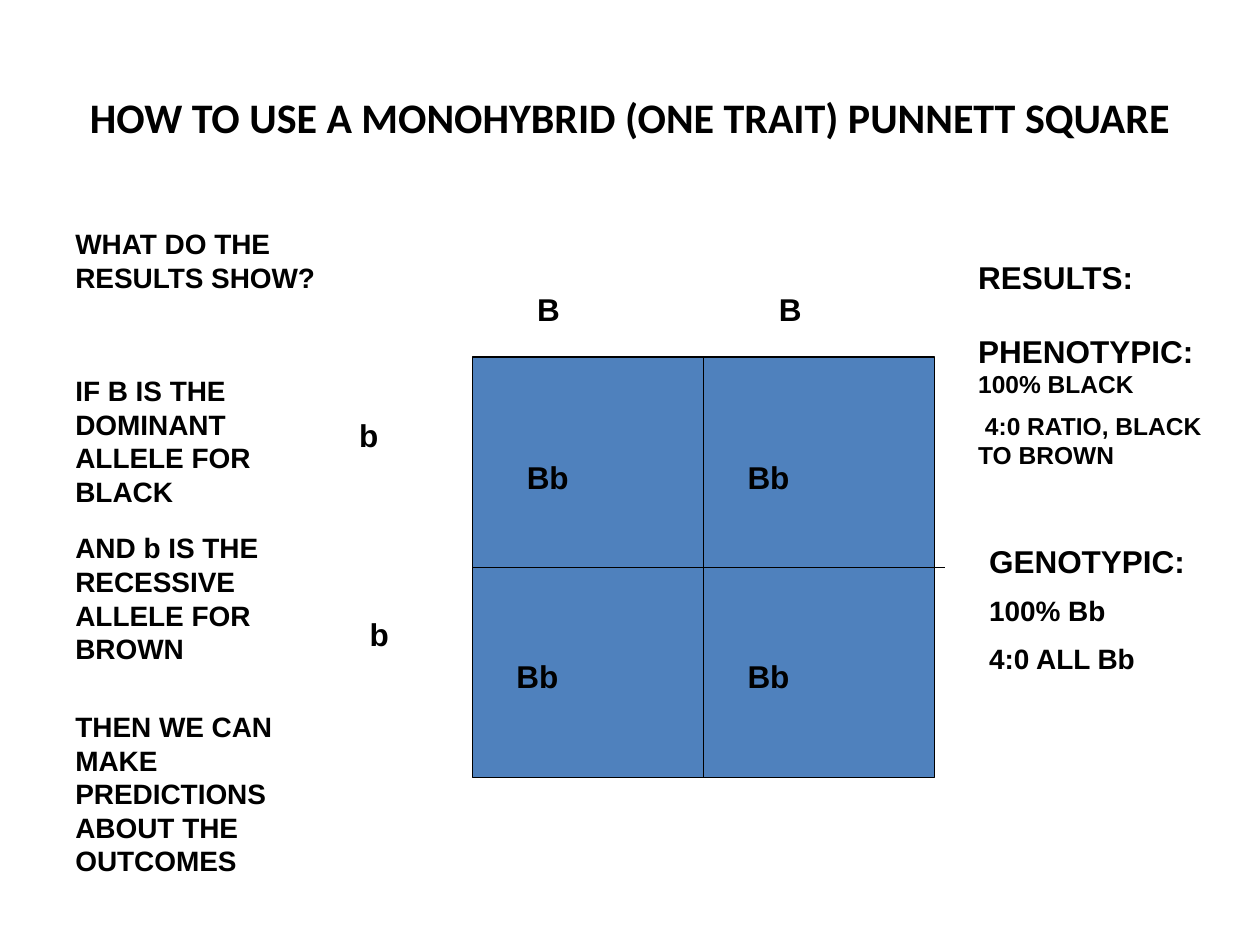
import pptx
import pptx.dml.color
import pptx.enum.shapes
import pptx.enum.text
import pptx.oxml.ns
import pptx.util
from lxml import etree

Cm = pptx.util.Cm
Pt = pptx.util.Pt

COLOURS = {"text": "000000", "line": "000000", "square": "4F81BD"}

# Punnett square, in centimetres
LEFT, TOP, WIDTH, HEIGHT = 9.53, 7.2, 9.31, 8.47
RIGHT, BOTTOM = LEFT + WIDTH, TOP + HEIGHT
MIDDLE_X, MIDDLE_Y = LEFT + WIDTH / 2, TOP + HEIGHT / 2

# left, top, width, text
ALLELES = [
    (10.58, 5.72, 4.66, "B"),
    (15.45, 5.72, 3.39, "B"),
    (6.99, 8.26, 1.91, "b"),
    (7.2, 12.28, 1.06, "b"),
    (10.37, 9.1, 2.54, "Bb"),
    (14.82, 9.1, 2.75, "Bb"),
    (10.16, 13.12, 3.39, "Bb"),
    (14.82, 13.12, 3.18, "Bb"),
]

# top, width, height, text
EXPLANATIONS = [
    (4.45, 6.35, 1.63, "WHAT DO THE RESULTS SHOW?"),
    (7.41, 4.87, 2.97, "IF B IS THE DOMINANT ALLELE FOR BLACK"),
    (10.58, 5.93, 2.97, "AND b IS THE RECESSIVE ALLELE FOR BROWN"),
    (14.18, 5.72, 3.66, "THEN WE CAN MAKE PREDICTIONS ABOUT THE OUTCOMES"),
]

# left, top, width, height, paragraphs made of (text, size) spans
RESULTS = [
    (19.47, 5.08, 5.29, 1.02, [[("RESULTS:", 18)]]),
    (19.47, 6.56, 5.29, 3.1, [
        [("PHENOTYPIC:", 18), (" 100% BLACK", 14)],
        [(" 4:0 RATIO, BLACK TO BROWN", 14)],
    ]),
    (19.69, 10.8, 4.66, 3.05, [
        [("GENOTYPIC:", 18)],
        [("100% Bb", 16)],
        [("4:0 ALL Bb", 16)],
    ]),
]


def rgb(name):
    return pptx.dml.color.RGBColor.from_string(COLOURS[name])


def style_span(span, size, font="Arial"):
    span.font.name = font
    span.font.size = Pt(size)
    span.font.bold = True
    span.font.color.rgb = rgb("text")


def add_title(page, text):
    title = page.shapes.title
    title.left, title.top = Cm(1.27), Cm(0.76)
    title.width, title.height = Cm(22.86), Cm(3.18)
    title.text_frame.text = text
    title.text_frame.vertical_anchor = pptx.enum.text.MSO_ANCHOR.MIDDLE
    paragraph = title.text_frame.paragraphs[0]
    paragraph.alignment = pptx.enum.text.PP_ALIGN.CENTER
    style_span(paragraph.runs[0], 24, "Calibri")


def add_text(page, left, top, width, height, paragraphs):
    """Add a text box; each later paragraph is set off by half its text size."""
    box = page.shapes.add_textbox(Cm(left), Cm(top), Cm(width), Cm(height))
    frame = box.text_frame
    frame.word_wrap = True
    frame.auto_size = pptx.enum.text.MSO_AUTO_SIZE.SHAPE_TO_FIT_TEXT
    for index, spans in enumerate(paragraphs):
        paragraph = frame.add_paragraph() if index else frame.paragraphs[0]
        if index:
            paragraph.space_before = Pt(spans[0][1] / 2)
        for text, size in spans:
            span = paragraph.add_run()
            span.text = text
            style_span(span, size)


def add_line(page, x1, y1, x2, y2):
    line = page.shapes.add_connector(
        pptx.enum.shapes.MSO_CONNECTOR.STRAIGHT, Cm(x1), Cm(y1), Cm(x2), Cm(y2))
    line.line.color.rgb = rgb("line")
    line.line.width = Pt(0.75)
    properties = line._element.spPr
    etree.SubElement(properties, pptx.oxml.ns.qn("a:effectLst"))


def add_punnett_square(page):
    square = page.shapes.add_shape(
        pptx.enum.shapes.MSO_SHAPE.RECTANGLE,
        Cm(LEFT), Cm(TOP), Cm(WIDTH), Cm(HEIGHT))
    square.shadow.inherit = False
    square.fill.solid()
    square.fill.fore_color.rgb = rgb("square")
    square.line.color.rgb = rgb("line")
    square.line.width = Pt(0.75)
    add_line(page, MIDDLE_X, TOP, MIDDLE_X, BOTTOM)
    add_line(page, LEFT, MIDDLE_Y, RIGHT + 0.21, MIDDLE_Y)
    add_line(page, RIGHT, BOTTOM - 0.64, RIGHT, TOP + 0.64)


def main():
    deck = pptx.Presentation()
    deck.slide_width, deck.slide_height = Cm(25.4), Cm(19.05)
    page = deck.slides.add_slide(deck.slide_layouts.get_by_name("Title Only"))

    add_title(page, "HOW TO USE A MONOHYBRID (ONE TRAIT) PUNNETT SQUARE")
    add_punnett_square(page)
    for left, top, width, text in ALLELES:
        add_text(page, left, top, width, 1.02, [[(text, 18)]])
    for top, width, height, text in EXPLANATIONS:
        add_text(page, 1.27, top, width, height, [[(text, 16)]])
    for left, top, width, height, paragraphs in RESULTS:
        add_text(page, left, top, width, height, paragraphs)

    deck.save("out.pptx")


if __name__ == "__main__":
    main()
